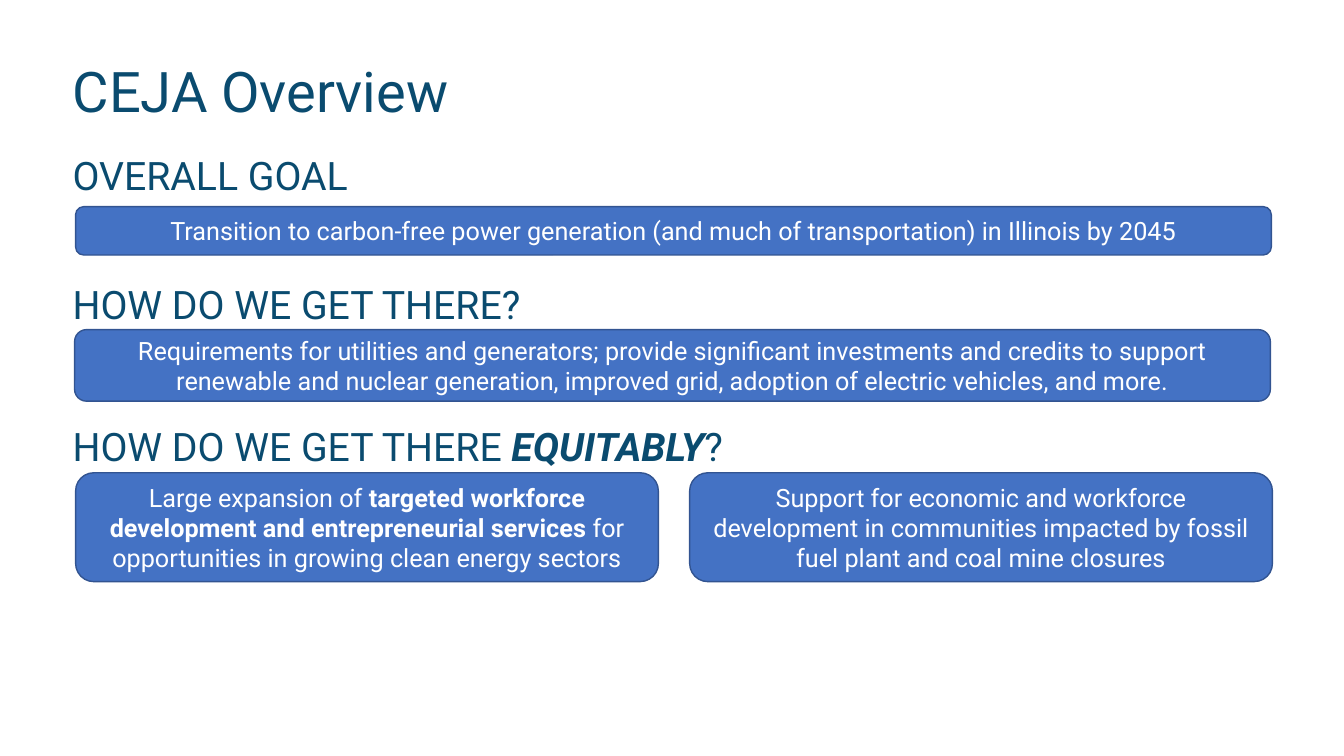
"""Build the CEJA overview slide."""
from lxml.etree import SubElement
from pptx import Presentation
from pptx.dml.color import RGBColor
from pptx.enum.shapes import MSO_SHAPE
from pptx.enum.text import MSO_ANCHOR, MSO_AUTO_SIZE, PP_ALIGN
from pptx.oxml.ns import qn
from pptx.util import Inches, Pt

NAVY = RGBColor(0x0A, 0x4B, 0x6F)
BLUE = RGBColor(0x44, 0x72, 0xC4)
EDGE = RGBColor(0x32, 0x54, 0x91)
WHITE = RGBColor(0xFF, 0xFF, 0xFF)


def write(para, text, size, color, align=PP_ALIGN.LEFT, before=0, spacing=1.0, slant=False):
    """Write text in a paragraph, with the words between asterisks in bold."""
    para.alignment = align
    para.space_before = Pt(before)
    para.line_spacing = spacing
    for i, part in enumerate(text.split("*")):
        if part:
            run = para.add_run()
            run.text = part
            run.font.name = "Roboto"
            run.font.size = Pt(size)
            run.font.color.rgb = color
            run.font.bold = i % 2 == 1
            run.font.italic = slant and i % 2 == 1


def place(shape, left, top, width, height):
    """Move and size a shape, in inches."""
    shape.left, shape.top = Inches(left), Inches(top)
    shape.width, shape.height = Inches(width), Inches(height)


deck = Presentation()
deck.slide_width, deck.slide_height = Inches(13.33), Inches(7.5)
slide = deck.slides.add_slide(deck.slide_layouts[1])

title = slide.shapes.title
place(title, 0.62, 0.58, 11.5, 0.71)
title.text_frame.auto_size = MSO_AUTO_SIZE.NONE
title.text_frame.vertical_anchor = MSO_ANCHOR.MIDDLE
write(title.text_frame.paragraphs[0], "CEJA Overview", size=40, color=NAVY, spacing=0.9)

body = slide.placeholders[1]
place(body, 0.62, 1.45, 12.09, 3.26)
frame = body.text_frame
frame.auto_size = MSO_AUTO_SIZE.NONE
heads = [
    ("OVERALL GOAL", 0),
    ("HOW DO WE GET THERE?", 58.6),
    ("HOW DO WE GET THERE *EQUITABLY*?", 67.9),
]
for i, (text, gap) in enumerate(heads):
    para = frame.add_paragraph() if i else frame.paragraphs[0]
    write(para, text, size=28, color=NAVY, before=gap, slant=True)
    props = para._p.get_or_add_pPr()
    props.set("marL", "0")
    props.set("indent", "0")
    SubElement(props, qn("a:buNone"))

cards = [
    (0.75, 2.05, 11.86, 0.48,
     "Transition to carbon-free power generation (and much of transportation) in Illinois by 2045"),
    (0.74, 3.27, 11.86, 0.71,
     "Requirements for utilities and generators; provide significant investments and credits to support "
     "renewable and nuclear generation, improved grid, adoption of electric vehicles, and more."),
    (0.75, 4.69, 5.78, 1.08,
     "Large expansion of *targeted workforce development and entrepreneurial services* for "
     "opportunities in growing clean energy sectors"),
    (6.84, 4.69, 5.78, 1.08,
     "Support for economic and workforce development in communities impacted by fossil "
     "fuel plant and coal mine closures"),
]
for *box, text in cards:
    card = slide.shapes.add_shape(MSO_SHAPE.ROUNDED_RECTANGLE, *map(Inches, box))
    card.shadow.inherit = False
    card.fill.solid()
    card.fill.fore_color.rgb = BLUE
    card.line.color.rgb = EDGE
    card.line.width = Pt(1)
    card.text_frame.word_wrap = True
    card.text_frame.vertical_anchor = MSO_ANCHOR.MIDDLE
    write(card.text_frame.paragraphs[0], text, size=18, color=WHITE, align=PP_ALIGN.CENTER)

deck.save("out.pptx")
